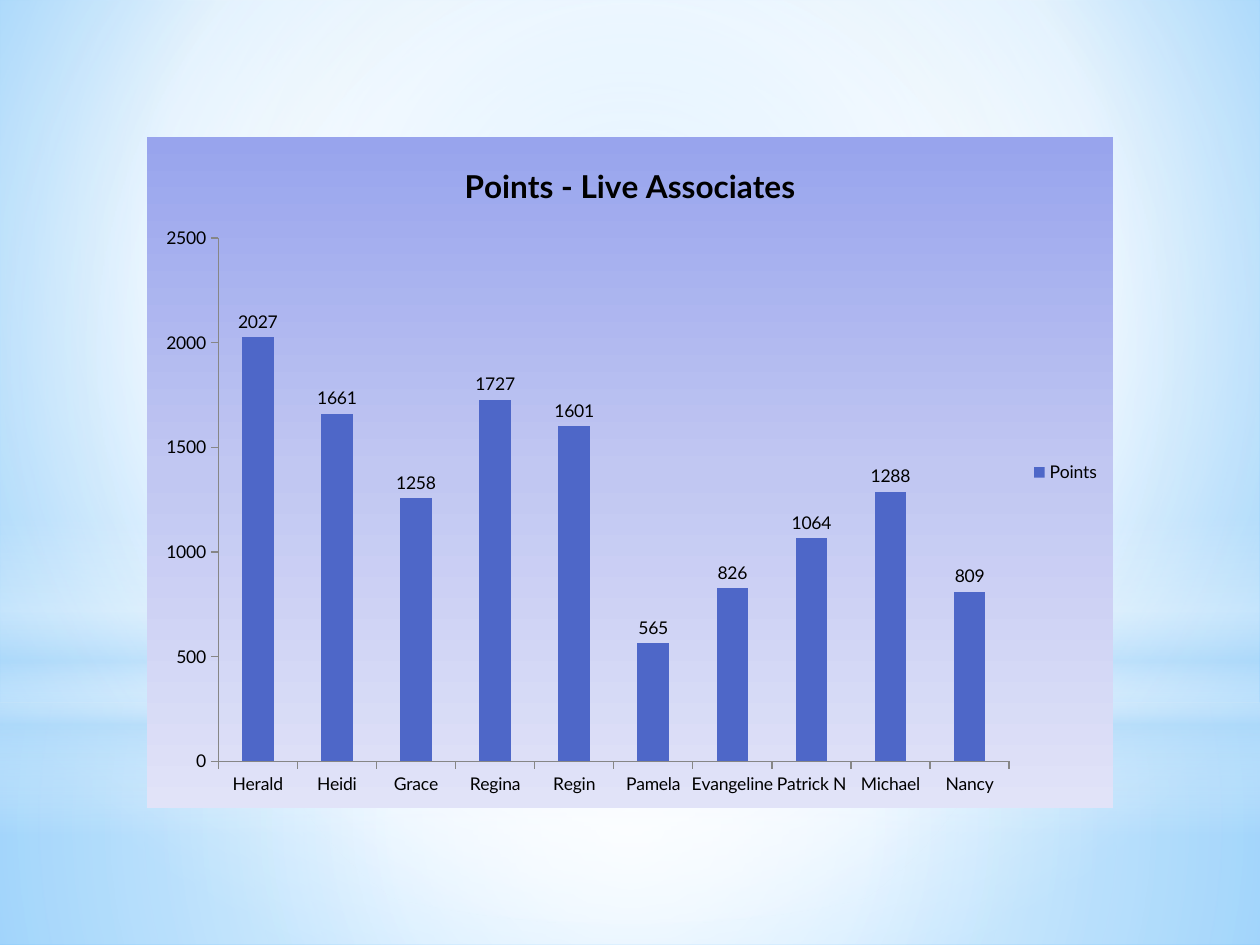
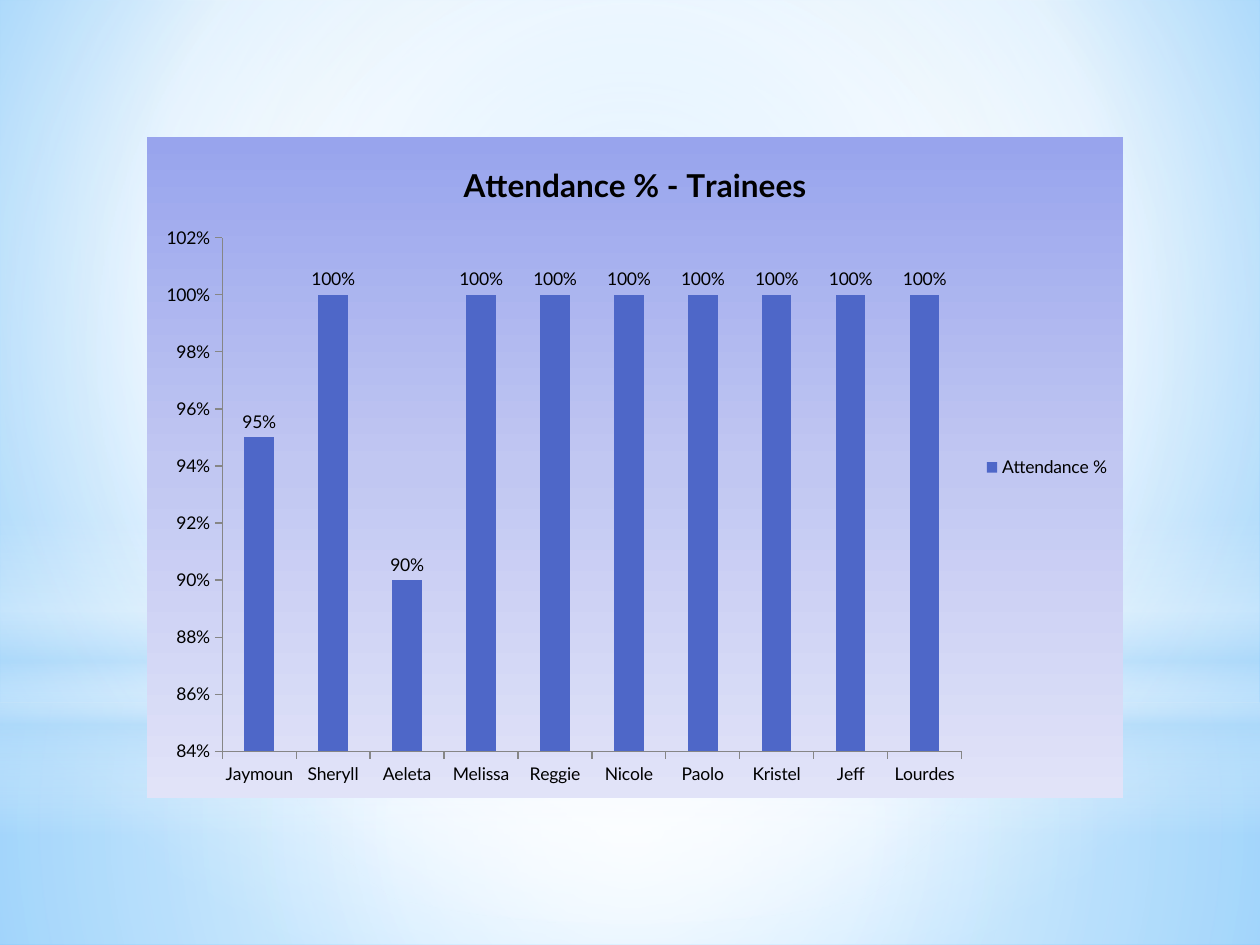
from lxml import etree
from pptx import Presentation, util as u
from pptx.chart.data import CategoryChartData
from pptx.dml.color import RGBColor
from pptx.enum import chart as ch, shapes
from pptx.oxml import parse_xml
from pptx.oxml.ns import nsdecls, qn

FONT = "Lato"
BLACK = RGBColor(0x00, 0x00, 0x00)
WHITE = RGBColor(0xFF, 0xFF, 0xFF)
MIST = RGBColor(0xB4, 0xDC, 0xFA)
SKY = RGBColor(0x9E, 0xD5, 0xFF)
DEEP_SKY = RGBColor(0x5B, 0xB9, 0xFF)
BAR = RGBColor(0x4E, 0x67, 0xC8)
AXIS = RGBColor(0x86, 0x86, 0x86)
PANEL_TOP = RGBColor(0x98, 0xA4, 0xED)
PANEL_MID = RGBColor(0xC1, 0xC7, 0xF2)
PANEL_END = RGBColor(0xE1, 0xE3, 0xF8)

CHARTS = [
    dict(title="Points - Live Associates", series="Points", box=(147, 137, 966, 671),
         fmt="General", scale=(0, 2500, 500),
         values={"Herald": 2027, "Heidi": 1661, "Grace": 1258, "Regina": 1727,
                 "Regin": 1601, "Pamela": 565, "Evangeline": 826,
                 "Patrick N": 1064, "Michael": 1288, "Nancy": 809}),
    dict(title="Attendance % - Trainees", series="Attendance %", box=(147, 137, 976, 661),
         fmt="0%", scale=(0.84, 1.02, 0.02),
         values={"Jaymoun": 0.95, "Sheryll": 1, "Aeleta": 0.9, "Melissa": 1,
                 "Reggie": 1, "Nicole": 1, "Paolo": 1, "Kristel": 1,
                 "Jeff": 1, "Lourdes": 1}),
]

# Gradient stops are (position %, colour, opacity %).
# A gradient runs down the shape unless a centre (left, top, right, bottom %) is given.
CENTRE = (50, 50, 50, 50)
BACKDROP = dict(stops=[(0, SKY, 100), (60, WHITE, 100), (100, DEEP_SKY, 100)],
                centre=(20, 10, 20, 60))
PANEL = dict(stops=[(0, PANEL_TOP, 100), (50, PANEL_MID, 100), (100, PANEL_END, 100)])
RECT, OVAL = shapes.MSO_SHAPE.RECTANGLE, shapes.MSO_SHAPE.OVAL
GLOWS = [
    (RECT, (0, 703, 1260, 242),
     dict(stops=[(0, WHITE, 91), (37, WHITE, 76), (100, MIST, 79)], centre=CENTRE)),
    (RECT, (0, 0, 1260, 703),
     dict(stops=[(0, WHITE, 89), (48, WHITE, 62), (100, MIST, 79)], centre=CENTRE)),
    (RECT, (0, 519, 1260, 315),
     dict(stops=[(0, WHITE, 0), (29, WHITE, 30), (45, MIST, 40),
                 (55, WHITE, 26), (65, MIST, 60), (100, WHITE, 0)])),
    (OVAL, (0, 220, 1260, 703),
     dict(stops=[(0, WHITE, 100), (56, WHITE, 0)], centre=CENTRE)),
]


def px(*lengths):
    """Turn px (126 to the inch) into EMU."""
    return [u.Emu(round(n * 914400 / 126)) for n in lengths]


def gradient(stops, centre=None):
    gs = "".join(
        f'<a:gs pos="{pos * 1000}"><a:srgbClr val="{color}">'
        f'<a:alpha val="{alpha * 1000}"/></a:srgbClr></a:gs>'
        for pos, color, alpha in stops)
    if centre:
        sides = " ".join(f'{k}="{v * 1000}"' for k, v in zip("ltrb", centre))
        course = f'<a:path path="circle"><a:fillToRect {sides}/></a:path>'
    else:
        course = '<a:lin ang="5400000" scaled="0"/>'
    return parse_xml(f'<a:gradFill {nsdecls("a")} rotWithShape="1">'
                     f'<a:gsLst>{gs}</a:gsLst>{course}</a:gradFill>')


def style_font(font, size=10, bold=False, color=BLACK):
    font.name, font.size, font.bold = FONT, u.Pt(size), bold
    font.color.rgb = color


def add_text(tf, text, **style):
    r = tf.paragraphs[0].add_run()
    r.text = text
    style_font(r.font, **style)


def decorate_master(master, s):
    """Set the master background and glows; s is only used to create the shapes."""
    c_sld = master.element.cSld
    for old in c_sld.findall(qn("p:bg")):
        c_sld.remove(old)
    bg = parse_xml(f'<p:bg {nsdecls("p", "a")}><p:bgPr><a:effectLst/></p:bgPr></p:bg>')
    bg[0].insert(0, gradient(**BACKDROP))
    c_sld.insert(0, bg)
    for i, (kind, box, fill) in enumerate(GLOWS):
        sp = s.shapes.add_shape(kind, *px(*box))
        sp.shadow.inherit = False
        sp.line.fill.background()
        sp.element.spPr.find(qn("a:prstGeom")).addnext(gradient(**fill))
        master.shapes.element.insert(2 + i, sp.element)


def add_column_chart(s, title, series, box, fmt, scale, values):
    data = CategoryChartData(number_format=fmt)
    data.categories = list(values)
    data.add_series(series, list(values.values()))
    chart = s.shapes.add_chart(ch.XL_CHART_TYPE.COLUMN_CLUSTERED, *px(*box), data).chart

    style_font(chart.font)
    add_text(chart.chart_title.text_frame, title, size=18, bold=True)
    chart.chart_title.include_in_layout = False
    chart.has_legend = True
    chart.legend.position = ch.XL_LEGEND_POSITION.RIGHT
    chart.legend.include_in_layout = False
    style_font(chart.legend.font)

    for axis in (chart.category_axis, chart.value_axis):
        axis.has_major_gridlines = False
        axis.major_tick_mark = ch.XL_TICK_MARK.OUTSIDE
        axis.minor_tick_mark = ch.XL_TICK_MARK.NONE
        axis.format.line.color.rgb = AXIS
        axis.format.line.width = u.Pt(0.75)
        style_font(axis.tick_labels.font)
    axis = chart.value_axis
    axis.minimum_scale, axis.maximum_scale, axis.major_unit = scale
    axis.tick_labels.number_format = fmt
    axis.tick_labels.number_format_is_linked = False

    plot = chart.plots[0]
    plot.gap_width = 150
    plot.vary_by_categories = False
    bars = plot.series[0].format.fill
    bars.solid()
    bars.fore_color.rgb = BAR
    plot.has_data_labels = True
    labels = plot.data_labels
    labels.show_value = True
    labels.number_format, labels.number_format_is_linked = fmt, False
    labels.position = ch.XL_LABEL_POSITION.OUTSIDE_END
    style_font(labels.font)

    sp_pr = parse_xml(f'<c:spPr {nsdecls("c", "a")}><a:ln><a:noFill/></a:ln></c:spPr>')
    sp_pr.insert(0, gradient(**PANEL))
    chart.element.find(qn("c:chart")).addnext(sp_pr) if hasattr(chart, "element") \
        else chart._chartSpace.find(qn("c:chart")).addnext(sp_pr)


def main():
    prs = Presentation()
    prs.slide_width, prs.slide_height = px(1260, 945)
    blank = prs.slide_layouts[6]
    for spec_no, content in enumerate(CHARTS):
        s = prs.slides.add_slide(blank)
        if spec_no == 0:
            decorate_master(prs.slide_master, s)
        add_column_chart(s, **content)
    prs.save("out.pptx")


if __name__ == "__main__":
    main()
